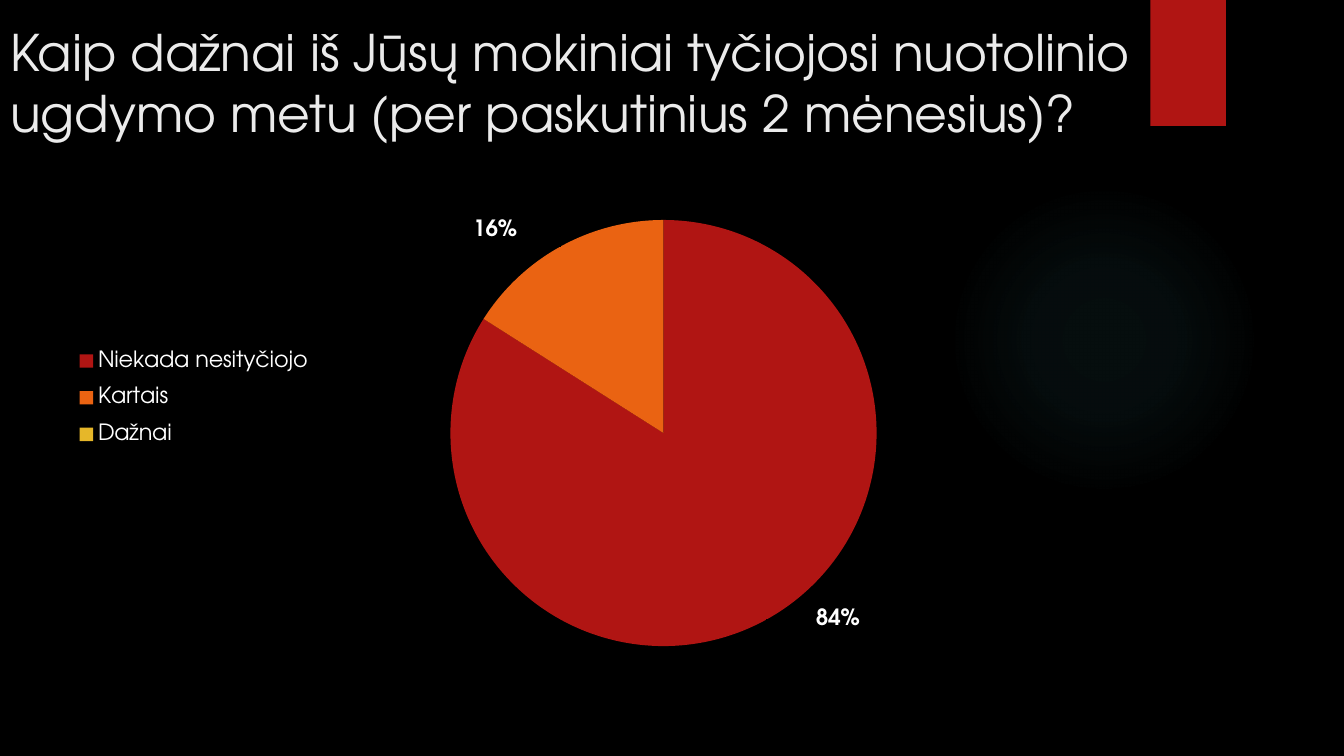
from dataclasses import dataclass

from lxml import etree
from pptx import Presentation
from pptx.chart.data import CategoryChartData
from pptx.dml.color import RGBColor
from pptx.enum.chart import XL_CHART_TYPE as ChartType
from pptx.enum.chart import XL_LABEL_POSITION as LabelPosition
from pptx.enum.chart import XL_LEGEND_POSITION as LegendPosition
from pptx.enum.shapes import MSO_SHAPE as ShapeType
from pptx.enum.text import MSO_ANCHOR as Anchor
from pptx.enum.text import MSO_AUTO_SIZE as AutoSize
from pptx.enum.text import PP_ALIGN as Align
from pptx.oxml import parse_xml
from pptx.oxml.ns import nsdecls, qn
from pptx.util import Inches, Pt


@dataclass(frozen=True)
class Theme:
    font: str = "TeX Gyre Adventor"
    background: str = "000000"
    title: str = "EBEBEB"
    text: str = "FFFFFF"
    accent: str = "B01513"
    glow: str = "50B9C1"
    slices: tuple = ("B01513", "EA6312", "E6B729")
    title_size: int = 36
    chart_size: int = 18
    label_size: int = 16


THEME = Theme()
QUESTION = ("Kaip dažnai iš Jūsų mokiniai tyčiojosi nuotolinio "
            "ugdymo metu (per paskutinius 2 mėnesius)?")
ANSWERS = {"Niekada nesityčiojo": 84, "Kartais": 16, "Dažnai": 0}
LABEL_SHIFTS = [(0.04, -0.03), (-0.035, 0)]


def set_values(target, values):
    for name, value in values.items():
        setattr(target, name, value)


def set_font(font, size, color, bold=False):
    set_values(font, {"name": THEME.font, "size": Pt(size), "bold": bold})
    font.color.rgb = RGBColor.from_string(color)


def add_plain_shape(slide, kind, box, color):
    shape = slide.shapes.add_shape(kind, *map(Inches, box))
    shape.shadow.inherit = False
    shape.fill.solid()
    shape.fill.fore_color.rgb = RGBColor.from_string(color)
    shape.line.fill.background()
    return shape


def add_glow(slide, box):
    """Soft circle that fades out from its centre."""
    glow = add_plain_shape(slide, ShapeType.OVAL, box, THEME.glow)
    stops = "".join(
        f'<a:gs pos="{position * 1000}"><a:srgbClr val="{THEME.glow}">'
        f'<a:alpha val="{alpha * 1000}"/></a:srgbClr></a:gs>'
        for position, alpha in ((0, 7), (36, 6), (69, 0), (100, 0)))
    gradient = parse_xml(
        f'<a:gradFill {nsdecls("a")} rotWithShape="1"><a:gsLst>{stops}</a:gsLst>'
        '<a:path path="circle"><a:fillToRect l="50000" t="50000" r="50000" '
        'b="50000"/></a:path></a:gradFill>')
    properties = glow.element.spPr
    properties.replace(properties.find(qn("a:solidFill")), gradient)


def add_title(slide, box):
    left, top, width, height = map(Inches, box)
    title = slide.shapes.title
    set_values(title, {"left": left, "top": top, "width": width, "height": height})
    frame = title.text_frame
    set_values(frame, {"word_wrap": True, "auto_size": AutoSize.NONE,
                       "vertical_anchor": Anchor.TOP})
    frame.text = QUESTION
    paragraph = frame.paragraphs[0]
    set_values(paragraph, {"alignment": Align.LEFT, "line_spacing": 1.0})
    set_font(paragraph.font, THEME.title_size, THEME.title)


def place(parent, index, **values):
    """Give a chart part a manual layout, in fractions of the chart."""
    for old in parent.findall(qn("c:layout")):
        parent.remove(old)
    layout = etree.Element(qn("c:layout"))
    manual = etree.SubElement(layout, qn("c:manualLayout"))
    for name, value in values.items():
        etree.SubElement(manual, qn(f"c:{name}")).set("val", str(value))
    parent.insert(index, layout)


def add_slice_labels(series):
    labels = series.data_labels
    set_values(labels, {"show_percentage": True, "show_value": False,
                        "number_format": "0%", "number_format_is_linked": False,
                        "position": LabelPosition.OUTSIDE_END})
    set_font(labels.font, THEME.label_size, THEME.text, bold=True)
    for index, (x, y) in enumerate(LABEL_SHIFTS):
        label = series.points[index].data_label
        set_font(label.font, THEME.label_size, THEME.text, bold=True)
        label.position = LabelPosition.OUTSIDE_END
    label_list = series.data_labels._element
    for element, (x, y) in zip(label_list.findall(qn("c:dLbl")), LABEL_SHIFTS):
        element.find(qn("c:showVal")).set("val", "0")
        element.find(qn("c:showPercent")).set("val", "1")
        place(element, 1, x=x, y=y)
    # The empty slice carries no label
    label_list.insert(len(LABEL_SHIFTS), parse_xml(
        f'<c:dLbl {nsdecls("c")}><c:idx val="{len(LABEL_SHIFTS)}"/>'
        '<c:delete val="1"/></c:dLbl>'))


def add_answer_chart(slide, box):
    data = CategoryChartData()
    data.categories = list(ANSWERS)
    data.add_series("Series 1", list(ANSWERS.values()))
    chart = slide.shapes.add_chart(ChartType.PIE, *map(Inches, box), data).chart
    set_values(chart, {"has_title": False, "has_legend": True})
    set_font(chart.font, THEME.chart_size, THEME.text)

    # Slices
    plot = chart.plots[0]
    plot.vary_by_categories = True
    series = plot.series[0]
    for index, color in enumerate(THEME.slices):
        point = series.points[index].format
        point.fill.solid()
        point.fill.fore_color.rgb = RGBColor.from_string(color)
        point.line.fill.background()
    add_slice_labels(series)

    # Legend and plot placement
    legend = chart.legend
    set_values(legend, {"position": LegendPosition.RIGHT, "include_in_layout": False})
    set_font(legend.font, THEME.label_size, THEME.text)
    place(legend._element, 1, xMode="edge", yMode="edge",
          x=0.03, y=0.31, w=0.22, h=0.24)
    plot_area = chart.element.find(f'.//{qn("c:plotArea")}')
    place(plot_area, 0, layoutTarget="inner", xMode="edge", yMode="edge",
          x=0.354, y=0.091, w=0.372, h=0.813)


def build_question_slide(presentation):
    slide = presentation.slides.add_slide(presentation.slide_layouts[5])
    slide.background.fill.solid()
    slide.background.fill.fore_color.rgb = RGBColor.from_string(THEME.background)
    add_glow(slide, (9.41, 1.83, 3.08, 3.08))
    add_plain_shape(slide, ShapeType.RECTANGLE, (11.41, 0, 0.75, 1.25), THEME.accent)
    add_title(slide, (0, 0.16, 11.49, 1.25))
    add_answer_chart(slide, (0.29, 1.71, 11.65, 5.2))


def main():
    presentation = Presentation()
    set_values(presentation, {"slide_width": Inches(13.33),
                              "slide_height": Inches(7.5)})
    build_question_slide(presentation)
    presentation.save("out.pptx")


if __name__ == "__main__":
    main()
